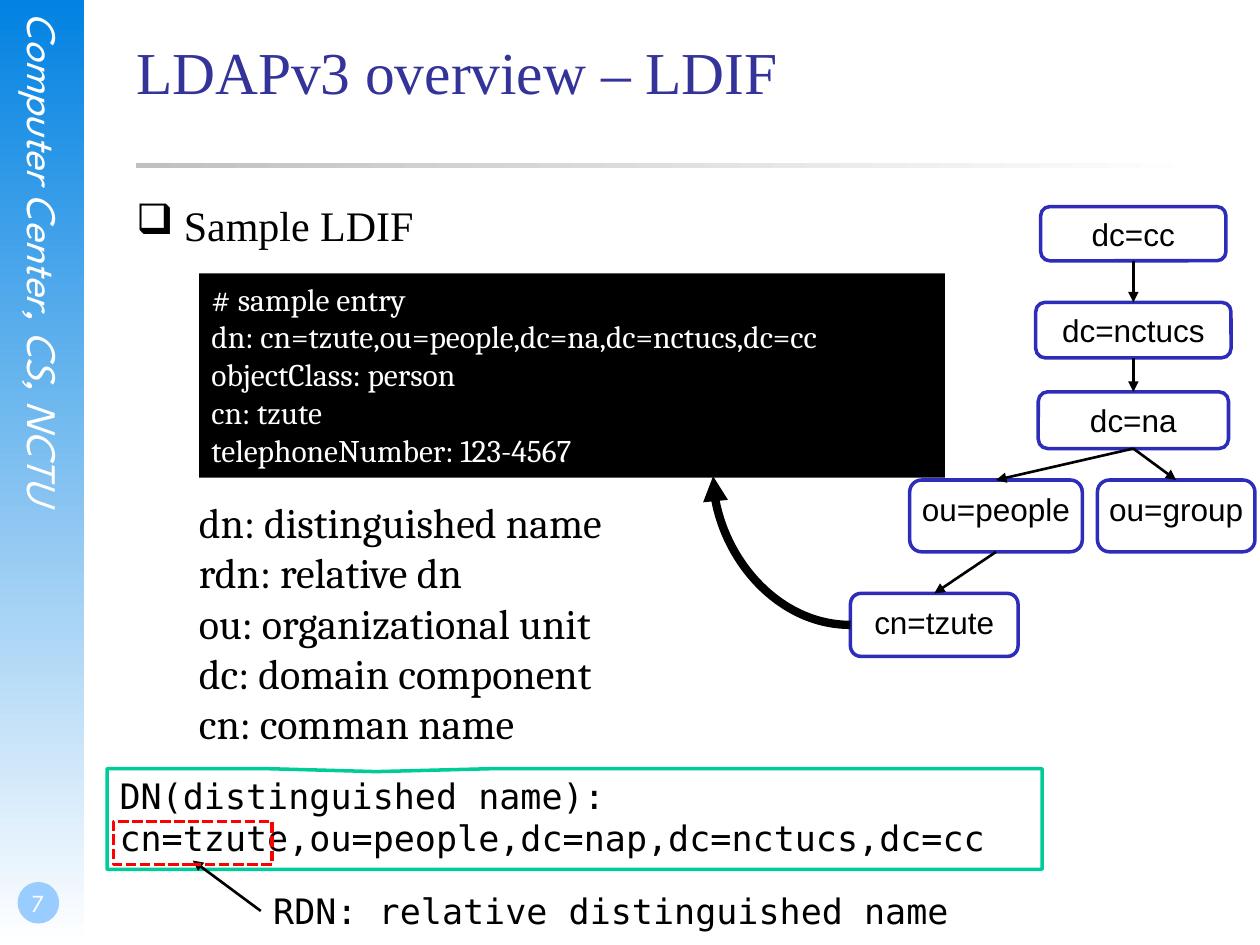
import pptx
import pptx.util
import pptx.dml.color
import pptx.enum.dml
import pptx.enum.shapes
import pptx.enum.text
import pptx.oxml.ns
import lxml.etree

Inches = pptx.util.Inches
Pt = pptx.util.Pt
RGBColor = pptx.dml.color.RGBColor
SHAPE = pptx.enum.shapes.MSO_SHAPE
CONNECTOR = pptx.enum.shapes.MSO_CONNECTOR
ALIGN = pptx.enum.text.PP_ALIGN
ANCHOR = pptx.enum.text.MSO_ANCHOR
qn = pptx.oxml.ns.qn

BLACK = RGBColor(0x00, 0x00, 0x00)
WHITE = RGBColor(0xFF, 0xFF, 0xFF)
SKY = RGBColor(0x02, 0x82, 0xE2)
PALE_BLUE = RGBColor(0x99, 0xCC, 0xFF)
SILVER = RGBColor(0xC0, 0xC0, 0xC0)
INDIGO = RGBColor(0x33, 0x33, 0x99)
NODE_BLUE = RGBColor(0x2D, 0x2D, 0xB9)
GREEN = RGBColor(0x00, 0xCC, 0x99)
RED = RGBColor(0xFF, 0x00, 0x00)

SERIF, LIST_SERIF, SANS = "Times New Roman", "Cambria", "Arial"
MONO, DISPLAY = "DejaVu Sans Mono", "League Spartan"
INSETS = (0.1, 0.05, 0.1, 0.05)
NO_INSETS = (0, 0, 0, 0)

# Directory tree: label -> box, and the parent-child links
NODES = {
    "dc=cc": (8.26, 1.64, 1.47, 0.43),
    "dc=nctucs": (8.22, 2.4, 1.55, 0.44),
    "dc=na": (8.24, 3.11, 1.51, 0.45),
    "ou=people": (7.22, 3.81, 1.37, 0.57),
    "ou=group": (8.71, 3.81, 1.25, 0.57),
    "cn=tzute": (6.75, 4.71, 1.33, 0.5),
}
LINKS = [("dc=cc", "dc=nctucs"), ("dc=nctucs", "dc=na"), ("dc=na", "ou=group"),
         ("ou=people", "cn=tzute"), ("dc=na", "ou=people")]


def write(shape, text, font, size, color, align=ALIGN.LEFT, anchor=ANCHOR.TOP,
          insets=INSETS, wrap=True, italic=False):
    """Put one paragraph per line of text into the shape."""
    frame = shape.text_frame
    frame.word_wrap = wrap
    frame.vertical_anchor = anchor
    (frame.margin_left, frame.margin_top,
     frame.margin_right, frame.margin_bottom) = map(Inches, insets)
    for index, line in enumerate(text.split("\n")):
        para = frame.add_paragraph() if index else frame.paragraphs[0]
        para.alignment = align
        span = para.add_run()
        span.text = line
        span.font.name = font
        span.font.size = Pt(size)
        span.font.color.rgb = color
        span.font.italic = italic
    return shape


def add_text(page, box, text, font, size, color, **options):
    shape = page.shapes.add_textbox(*map(Inches, box))
    return write(shape, text, font, size, color, **options)


def add_box(page, box, kind=SHAPE.RECTANGLE, fill=None, line=None):
    shape = page.shapes.add_shape(kind, *map(Inches, box))
    shape.shadow.inherit = False
    if fill is None:
        shape.fill.background()
    else:
        shape.fill.solid()
        shape.fill.fore_color.rgb = fill
    if line is None:
        shape.line.fill.background()
    else:
        shape.line.color.rgb = line
        shape.line.width = Pt(2)
    return shape


def add_fade(page, box, color, angle):
    """Rectangle that fades from a colour to white."""
    shape = add_box(page, box)
    shape.fill.gradient()
    shape.fill.gradient_angle = angle
    for stop, stop_color in zip(shape.fill.gradient_stops, (color, WHITE)):
        stop.color.rgb = stop_color


def add_arrow(page, start, end, kind=CONNECTOR.STRAIGHT, width=1.5):
    arrow = page.shapes.add_connector(kind, *map(Inches, (*start, *end)))
    arrow.line.color.rgb = BLACK
    arrow.line.width = Pt(width)
    head = lxml.etree.SubElement(arrow.line._get_or_add_ln(), qn("a:tailEnd"))
    head.set("type", "triangle")
    properties = arrow._element.spPr
    lxml.etree.SubElement(properties, qn("a:effectLst"))
    return arrow


def add_sidebar(page, box):
    left, top, width, height = box
    add_fade(page, box, SKY, 270)
    label = add_text(page, (left + 0.15, top + 0.1, 0.4, 5.11), "Computer Center, CS, NCTU",
                     DISPLAY, 24, WHITE, insets=NO_INSETS, italic=True)
    label.text_frame._txBody.bodyPr.set("vert", "eaVert")
    # Page number
    add_box(page, (left + 0.14, top + height - 0.5, 0.33, 0.33), SHAPE.OVAL, PALE_BLUE)
    add_text(page, (left, top + height - 0.67, 0.58, 0.5), "7", DISPLAY, 14, WHITE,
             align=ALIGN.CENTER, anchor=ANCHOR.BOTTOM, insets=(0.02, 0, 0, 0.05))


def add_heading(page, box):
    left, top, width, height = box
    add_fade(page, (left, top + 1.01, width, 0.04), SILVER, 0)
    add_text(page, box, "LDAPv3 overview – LDIF", SERIF, 34, INDIGO, insets=NO_INSETS)


def add_sample(page, box):
    left, top, width, height = box
    bullet = add_text(page, (left, top, width, 0.5), "Sample LDIF", SERIF, 24, BLACK,
                      insets=NO_INSETS)
    para = bullet.text_frame.paragraphs[0]
    para.space_before = Pt(6)
    settings = para._p.get_or_add_pPr()
    settings.set("marL", str(Inches(0.38)))
    settings.set("indent", str(-Inches(0.38)))
    lxml.etree.SubElement(settings, qn("a:buChar")).set("char", "❑")
    # Entry listing and abbreviations
    listing = add_box(page, (left + 0.5, top + 0.59, 5.92, 1.62), fill=BLACK)
    write(listing, "# sample entry\ndn: cn=tzute,ou=people,dc=na,dc=nctucs,dc=cc\n"
          "objectClass: person\ncn: tzute\ntelephoneNumber: 123-4567", LIST_SERIF, 18, WHITE)
    add_text(page, (left + 0.4, top + 2.31, 3.92, 2.12),
             "dn: distinguished name\nrdn: relative dn\nou: organizational unit\n"
             "dc: domain component\ncn: comman name", LIST_SERIF, 24, BLACK)


def add_tree(page, nodes, links):
    for label, box in nodes.items():
        node = add_box(page, box, SHAPE.ROUNDED_RECTANGLE, WHITE, NODE_BLUE)
        write(node, label, SANS, 18, BLACK, align=ALIGN.CENTER, wrap=False)
    for parent, child in links:
        left, top, width, height = nodes[parent]
        child_left, child_top, child_width, _ = nodes[child]
        add_arrow(page, (left + width / 2, top + height),
                  (child_left + child_width / 2, child_top))
    # Curve from the leaf back to its entry
    left, top, width, height = nodes["cn=tzute"]
    curve = add_arrow(page, (left, top + height / 2), (5.66, 3.78), CONNECTOR.CURVE, 4.75)
    curve._element.spPr.find(qn("a:prstGeom")).set("prst", "curvedConnector2")


def add_name_note(page, box):
    left, top, width, height = box
    callout = add_box(page, box, SHAPE.RECTANGULAR_CALLOUT, WHITE, GREEN)
    callout.adjustments[0] = -0.212
    callout.adjustments[1] = -0.469
    write(callout, "DN(distinguished name):\ncn=tzute,ou=people,dc=nap,dc=nctucs,dc=cc",
          MONO, 20, BLACK, wrap=False)
    # Relative name: pointer, one-line label and dashed frame
    add_arrow(page, (left + 1.22, top + 1.13), (left + 0.68, top + 0.73))
    add_text(page, (left + 1.22, top + 0.91, 5.7, 0.44), "RDN: relative distinguished name",
             MONO, 20, BLACK)
    frame = add_box(page, (left + 0.05, top + 0.42, 1.26, 0.34), line=RED)
    frame.line.dash_style = pptx.enum.dml.MSO_LINE.SQUARE_DOT


def main():
    deck = pptx.Presentation()
    deck.slide_width, deck.slide_height = Inches(10), Inches(7.5)
    page = deck.slides.add_slide(deck.slide_layouts[6])
    add_sidebar(page, (0, 0, 0.67, 7.5))
    add_heading(page, (1.08, 0.28, 8.5, 1.25))
    add_sample(page, (1.08, 1.58, 8.5, 5.08))
    add_tree(page, NODES, LINKS)
    add_name_note(page, (0.85, 6.1, 7.42, 0.8))
    deck.save("out.pptx")


if __name__ == "__main__":
    main()
